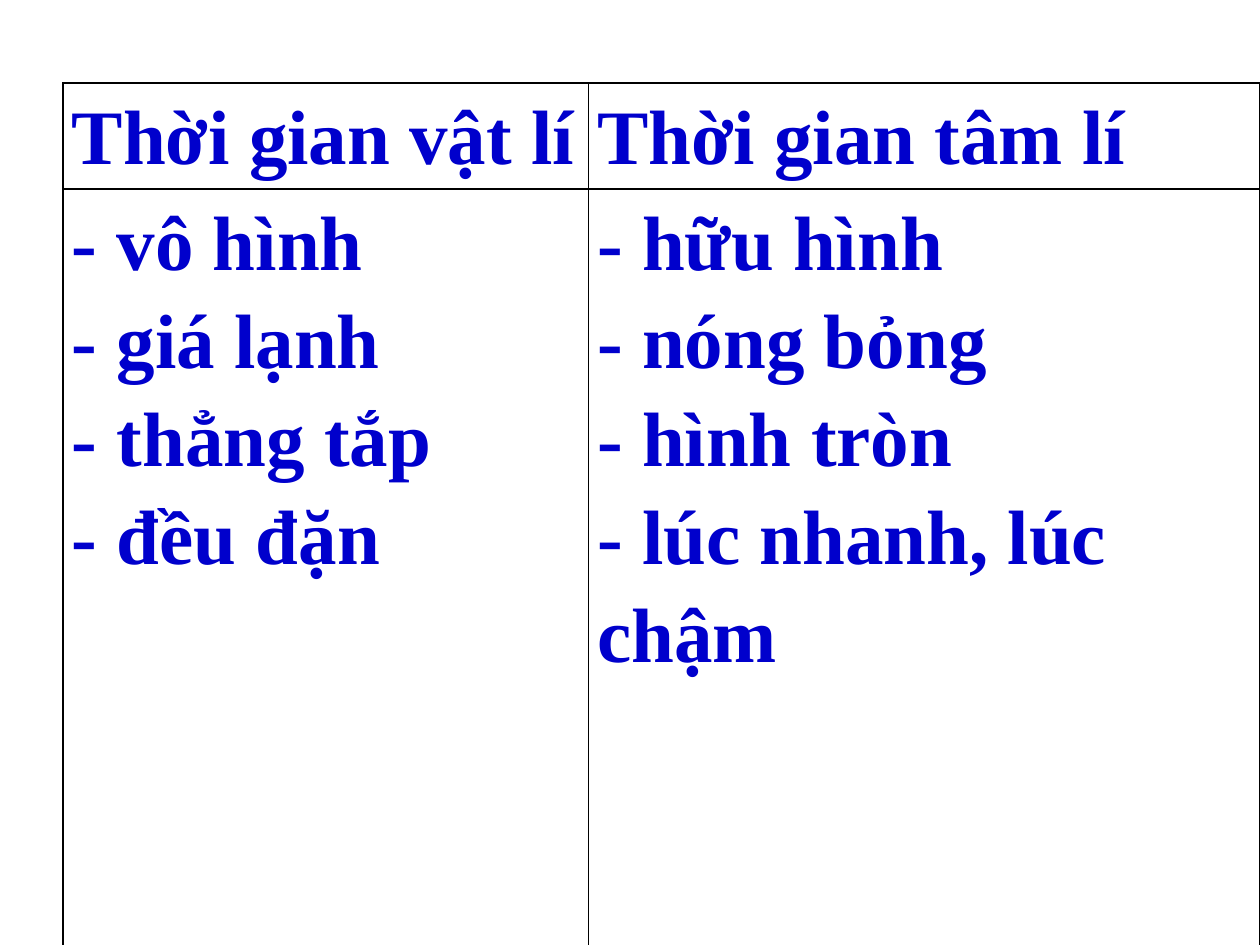
import pptx
import pptx.util
import pptx.dml.color
import pptx.oxml
import pptx.oxml.ns

Inches = pptx.util.Inches
Pt = pptx.util.Pt


def tint(code):
    return pptx.dml.color.RGBColor.from_string(code)


def edge(cell, side):
    space = pptx.oxml.ns.nsdecls("a")
    line = pptx.oxml.parse_xml(
        f'<a:{side} {space} w="{Pt(1)}"><a:solidFill>'
        f'<a:srgbClr val="000000"/></a:solidFill></a:{side}>')
    return line


deck = pptx.Presentation()
deck.slide_width = Inches(10)
deck.slide_height = Inches(7.5)
slide = deck.slides.add_slide(deck.slide_layouts[6])

rows = [
    ["Thời gian vật lí", "Thời gian tâm lí"],
    ["- vô hình\n- giá lạnh\n- thẳng tắp\n- đều đặn",
     "- hữu hình\n- nóng bỏng\n- hình tròn\n- lúc nhanh, lúc chậm"],
]
widths = [4.17, 5.33]
heights = [0.84, 6.12]

frame = slide.shapes.add_table(
    2, 2, Inches(0.5), Inches(0.66), Inches(sum(widths)), Inches(sum(heights)))
table = frame.table
table.first_row = False
table.horz_banding = False
for col, width in zip(table.columns, widths):
    col.width = Inches(width)
for row, height in zip(table.rows, heights):
    row.height = Inches(height)

for row, texts in zip(table.rows, rows):
    for cell, text in zip(row.cells, texts):
        cell.margin_left = cell.margin_right = Inches(0.07)
        cell.margin_top = cell.margin_bottom = 0
        cell.fill.background()
        props = cell._tc.get_or_add_tcPr()
        for spot, side in enumerate(["lnL", "lnR", "lnT", "lnB"]):
            props.insert(spot, edge(cell, side))
        cell.text_frame.text = text
        for para in cell.text_frame.paragraphs:
            para.line_spacing = 1.15
            for run in para.runs:
                run.font.name = "Times New Roman"
                run.font.size = Pt(44)
                run.font.bold = True
                run.font.color.rgb = tint("0000CC")

deck.save("out.pptx")
